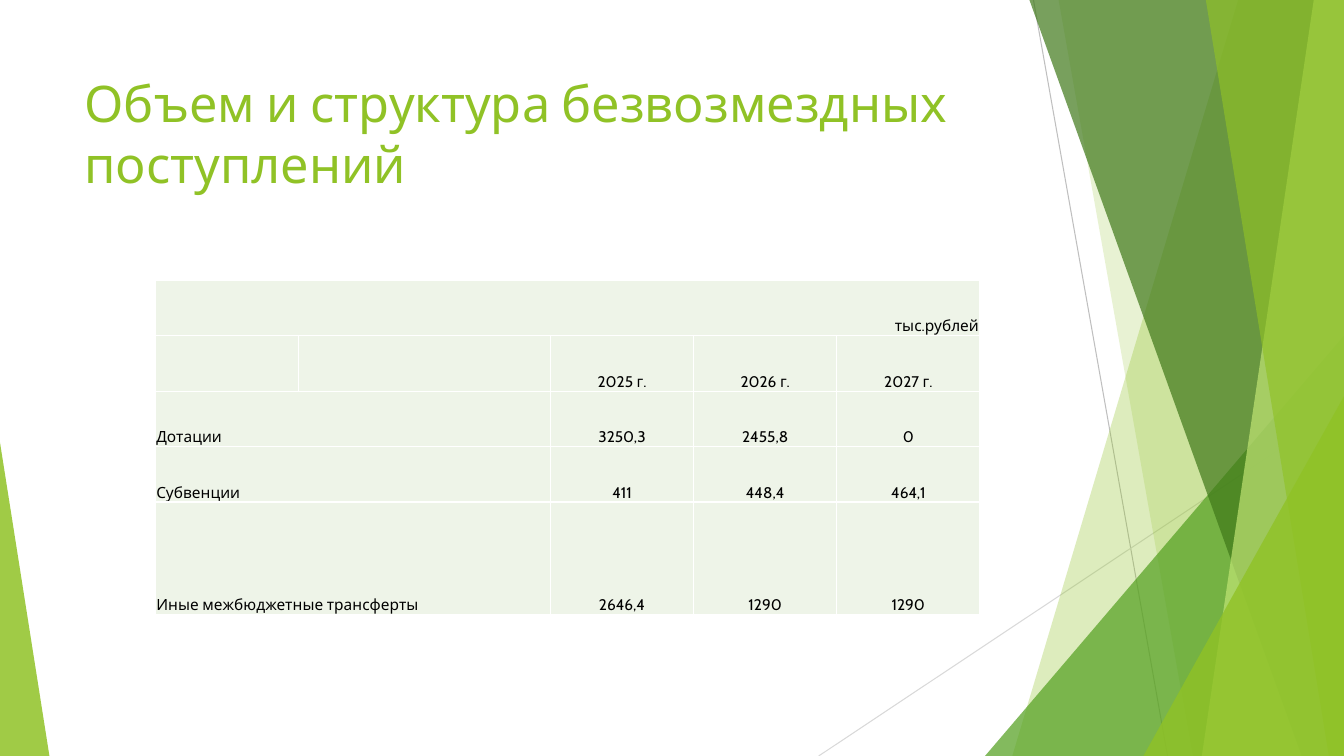
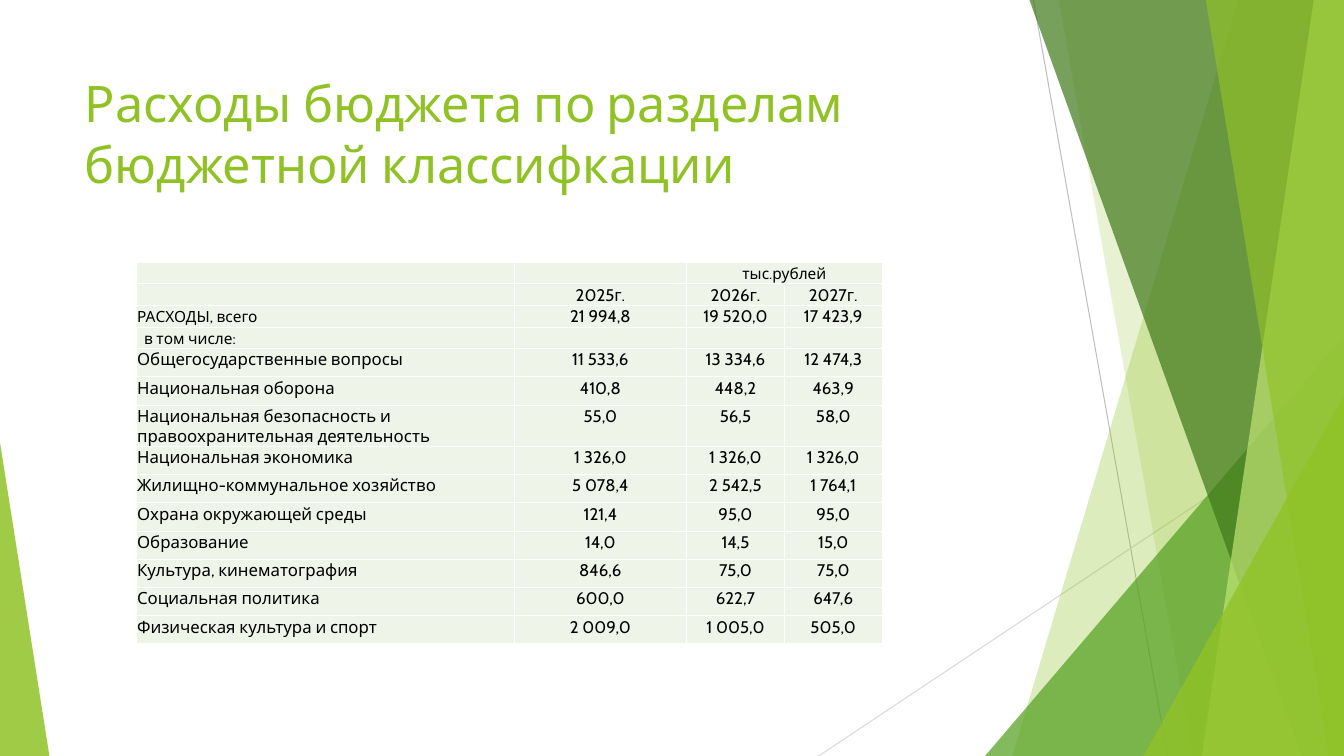
from dataclasses import dataclass

from lxml.etree import SubElement
from pptx import Presentation
from pptx.dml.color import RGBColor
from pptx.enum.shapes import MSO_CONNECTOR, MSO_SHAPE
from pptx.enum.text import MSO_ANCHOR, PP_ALIGN
from pptx.oxml import parse_xml
from pptx.oxml.ns import nsdecls, qn
from pptx.util import Inches, Pt


@dataclass(frozen=True)
class Theme:
    font: str = "Cabin"
    green: str = "90C226"
    leaf: str = "54A021"
    forest: str = "3F7819"
    lime: str = "C0E474"
    cell: str = "EEF4E8"
    border: str = "FFFFFF"
    text: str = "000000"
    title_size: int = 36
    small: int = 11
    body: int = 12


@dataclass(frozen=True)
class RowStyle:
    anchor: MSO_ANCHOR
    label_size: int
    value_size: int
    label_align: PP_ALIGN = PP_ALIGN.LEFT
    indent: float = 0.01


THEME = Theme()
WIDTH, HEIGHT = 13.33, 7.5

UNITS = RowStyle(MSO_ANCHOR.BOTTOM, THEME.small, THEME.small, PP_ALIGN.RIGHT)
PLAIN = RowStyle(MSO_ANCHOR.BOTTOM, THEME.small, THEME.small)
YEARS = RowStyle(MSO_ANCHOR.BOTTOM, THEME.small, THEME.body)
TOTAL = RowStyle(MSO_ANCHOR.MIDDLE, THEME.small, THEME.body)
AMONG = RowStyle(MSO_ANCHOR.MIDDLE, THEME.small, THEME.small, indent=0.08)
ITEM = RowStyle(MSO_ANCHOR.TOP, THEME.body, THEME.body)

LINES = [
    ((10.25, 0), (11.58, HEIGHT), "BFBFBF"),
    ((WIDTH, 4.03), (8.12, HEIGHT), "D9D9D9"),
]
# Each band runs from a top x and a bottom x to the right edge.
BANDS_BACK = [(12.28, 10.04, THEME.green, 30), (10.5, 11.83, THEME.green, 20)]
BANDS_FRONT = [
    (10.21, 12.91, THEME.forest, 70),
    (13.03, 11.92, THEME.lime, 70),
    (11.96, 13.18, THEME.green, 65),
]
MIDDLE_CORNER = (9.77, 3.33, 3.56, 1, THEME.leaf, 72)
FRONT_CORNERS = [
    (11.34, 3.93, 1.99, 1, THEME.green, 80),
    (0, 4.39, 0.49, 0, THEME.green, 85),
]

SLIDES = [
    {
        "title": "Объем и структура безвозмездных поступлений",
        "at": (1.54, 2.78),
        "columns": [1.42, 2.5, 1.42, 1.42, 1.42],
        "merges": [(0, 0, 4), (2, 0, 1), (3, 0, 1), (4, 0, 1)],
        "rows": [
            (UNITS, 0.55, ["тыс.рублей", "", "", "", ""]),
            (PLAIN, 0.55, ["", "", "2025 г.", "2026 г.", "2027 г."]),
            (PLAIN, 0.55, ["Дотации", "", "3250,3", "2455,8", "0"]),
            (PLAIN, 0.55, ["Субвенции", "", "411", "448,4", "464,1"]),
            (PLAIN, 1.12, ["Иные межбюджетные трансферты", "", "2646,4", "1290", "1290"]),
        ],
    },
    {
        "title": "Расходы бюджета по разделам бюджетной классифкации",
        "at": (1.35, 2.6),
        "columns": [3.75, 1.71, 0.97, 0.97],
        "merges": [(0, 2, 3)],
        "rows": [
            (PLAIN, 0.21, ["", "", "тыс.рублей", ""]),
            (YEARS, 0.22, ["", "2025г.", "2026г.", "2027г."]),
            (TOTAL, 0.22, ["РАСХОДЫ, всего", "21 994,8", "19 520,0", "17 423,9"]),
            (AMONG, 0.21, ["в том числе:", "", "", ""]),
            (ITEM, 0.28, ["Общегосударственные вопросы", "11 533,6", "13 334,6", "12 474,3"]),
            (ITEM, 0.28, ["Национальная оборона", "410,8", "448,2", "463,9"]),
            (ITEM, 0.28, ["Национальная безопасность и правоохранительная деятельность",
                          "55,0", "56,5", "58,0"]),
            (ITEM, 0.28, ["Национальная экономика", "1 326,0", "1 326,0", "1 326,0"]),
            (ITEM, 0.28, ["Жилищно-коммунальное хозяйство", "5 078,4", "2 542,5", "1 764,1"]),
            (ITEM, 0.28, ["Охрана окружающей среды", "121,4", "95,0", "95,0"]),
            (ITEM, 0.28, ["Образование", "14,0", "14,5", "15,0"]),
            (ITEM, 0.28, ["Культура, кинематография", "846,6", "75,0", "75,0"]),
            (ITEM, 0.28, ["Социальная политика", "600,0", "622,7", "647,6"]),
            (ITEM, 0.28, ["Физическая культура и спорт", "2 009,0", "1 005,0", "505,0"]),
        ],
    },
]


def paint(shape, color, opacity):
    shape.shadow.inherit = False
    shape.line.fill.background()
    shape.fill.solid()
    shape.fill.fore_color.rgb = RGBColor.from_string(color)
    tint = shape.fill._xPr.find(qn("a:solidFill"))[0]
    SubElement(tint, qn("a:alpha"), val=str(opacity * 1000))


def add_line(page, start, end, color):
    line = page.shapes.add_connector(
        MSO_CONNECTOR.STRAIGHT, *(Inches(value) for value in start + end))
    line.line.color.rgb = RGBColor.from_string(color)
    line.line.width = Pt(0.75)
    SubElement(line._element.spPr, qn("a:effectLst"))


def add_band(page, top_x, bottom_x, color, opacity):
    corners = [(WIDTH, 0), (WIDTH, HEIGHT), (bottom_x, HEIGHT)]
    outline = page.shapes.build_freeform(Inches(top_x), 0)
    outline.add_line_segments([(Inches(x), Inches(y)) for x, y in corners], close=True)
    paint(outline.convert_to_shape(), color, opacity)


def add_corner(page, left, top, width, apex, color, opacity):
    corner = page.shapes.add_shape(
        MSO_SHAPE.ISOSCELES_TRIANGLE,
        Inches(left), Inches(top), Inches(width), Inches(HEIGHT - top))
    corner.adjustments[0] = apex
    paint(corner, color, opacity)


def add_backdrop(page):
    for line in LINES:
        add_line(page, *line)
    for band in BANDS_BACK:
        add_band(page, *band)
    add_corner(page, *MIDDLE_CORNER)
    for band in BANDS_FRONT:
        add_band(page, *band)
    for corner in FRONT_CORNERS:
        add_corner(page, *corner)


def set_font(para, size, color):
    para.font.name = THEME.font
    para.font.size = Pt(size)
    para.font.color.rgb = RGBColor.from_string(color)


def add_title(page, text):
    box = page.shapes.add_textbox(Inches(0.74), Inches(0.67), Inches(9.4), Inches(1.44))
    box.text_frame.word_wrap = True
    para = box.text_frame.paragraphs[0]
    para.text = text
    set_font(para, THEME.title_size, THEME.green)


def add_borders(cell):
    properties = cell._tc.get_or_add_tcPr()
    for position, side in enumerate(("lnL", "lnR", "lnT", "lnB")):
        properties.insert(position, parse_xml(
            f'<a:{side} {nsdecls("a")} w="12700"><a:solidFill>'
            f'<a:srgbClr val="{THEME.border}"/></a:solidFill></a:{side}>'))


def fill_cell(cell, text, style, is_label):
    size = style.label_size if is_label else style.value_size
    cell.margin_left = Inches(style.indent if is_label else 0.01)
    cell.margin_right = cell.margin_top = Inches(0.01)
    cell.margin_bottom = 0
    cell.vertical_anchor = style.anchor
    cell.fill.solid()
    cell.fill.fore_color.rgb = RGBColor.from_string(THEME.cell)
    add_borders(cell)
    para = cell.text_frame.paragraphs[0]
    para.text = text
    para.alignment = style.label_align if is_label else PP_ALIGN.CENTER
    set_font(para, size, THEME.text)
    if not text:
        SubElement(para._p, qn("a:endParaRPr"), sz=str(size * 100))


def add_budget_table(page, at, columns, rows, merges):
    left, top = at
    height = sum(row_height for _, row_height, _ in rows)
    table = page.shapes.add_table(
        len(rows), len(columns), Inches(left), Inches(top),
        Inches(sum(columns)), Inches(height)).table
    table.first_row = table.horz_banding = False
    for column, width in zip(table.columns, columns):
        column.width = Inches(width)
    for row, (style, row_height, texts) in zip(table.rows, rows):
        row.height = Inches(row_height)
        for index, (cell, text) in enumerate(zip(row.cells, texts)):
            fill_cell(cell, text, style, index == 0)
    for row, first, last in merges:
        table.cell(row, first).merge(table.cell(row, last))


def main():
    deck = Presentation()
    deck.slide_width, deck.slide_height = Inches(WIDTH), Inches(HEIGHT)
    for content in SLIDES:
        page = deck.slides.add_slide(deck.slide_layouts[6])
        add_backdrop(page)
        add_title(page, content["title"])
        add_budget_table(page, content["at"], content["columns"],
                         content["rows"], content["merges"])
    deck.save("out.pptx")


if __name__ == "__main__":
    main()
